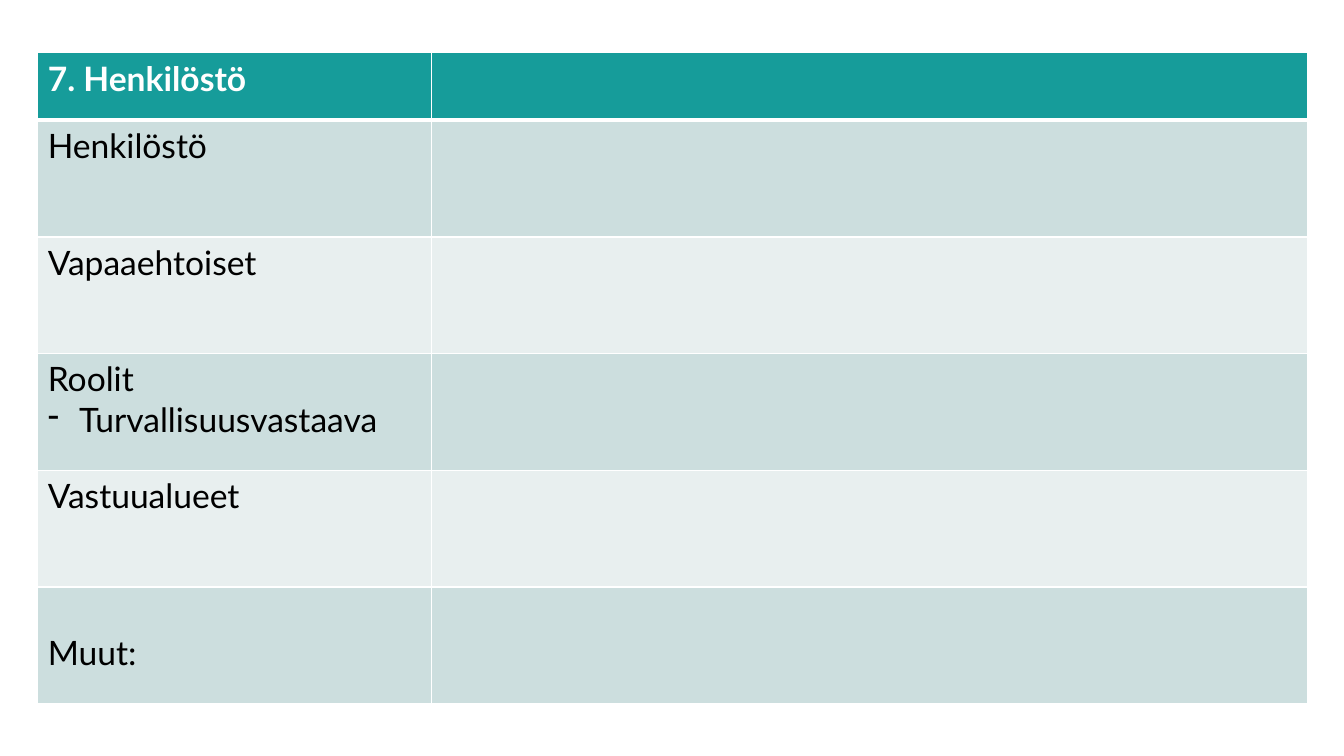
from dataclasses import dataclass

from lxml.etree import SubElement as Sub
from pptx import Presentation
from pptx.dml.color import RGBColor as Rgb
from pptx.oxml.ns import qn
from pptx.table import Table, _Cell as Cell
from pptx.util import Cm, Pt


@dataclass(frozen=True)
class Theme:
    font: str = "Lato"
    size: int = 24
    head: str = "169C9A"
    dark: str = "CCDEDE"
    light: str = "E8EFEF"
    white: str = "FFFFFF"
    black: str = "000000"
    thin: int = 1
    thick: int = 3


@dataclass(frozen=True)
class Topic:
    title: str
    roles: tuple[str, ...] = ()
    drop: float = 0.13


THEME = Theme()
WIDTHS = (9.93, 22.07)
HEAD_TALL, BODY_TALL = 1.7, 2.94
INDENT = 0.79
TOPICS = (
    Topic("7. Henkilöstö"),
    Topic("Henkilöstö"),
    Topic("Vapaaehtoiset"),
    Topic("Roolit", roles=("Turvallisuusvastaava",)),
    Topic("Vastuualueet"),
    Topic("Muut:", drop=1.15),
)


def add_edges(cell: Cell, row: int) -> None:
    """Rule the cell in white, with a thick line below the header."""
    edges = {
        "L": THEME.thin,
        "R": THEME.thin,
        "T": THEME.thick if row == 1 else THEME.thin,
        "B": THEME.thick if row == 0 else THEME.thin,
    }
    props = cell._tc.get_or_add_tcPr()
    for side, width in edges.items():
        line = Sub(props, qn(f"a:ln{side}"), w=str(Pt(width)))
        fill = Sub(line, qn("a:solidFill"))
        Sub(fill, qn("a:srgbClr"), val=THEME.white)


def paint(cell: Cell, row: int) -> None:
    add_edges(cell, row)
    band = THEME.dark if row % 2 else THEME.light
    cell.fill.solid()
    cell.fill.fore_color.rgb = Rgb.from_string(band if row else THEME.head)


def write(cell: Cell, topic: Topic, row: int) -> None:
    cell.margin_top = Cm(topic.drop)
    frame = cell.text_frame
    frame.text = "\n".join((topic.title, *topic.roles))
    style = {"name": THEME.font, "size": Pt(THEME.size), "bold": row == 0}
    ink = THEME.black if row else THEME.white
    for para in frame.paragraphs:
        font = para.runs[0].font
        for key, value in style.items():
            setattr(font, key, value)
        font.color.rgb = Rgb.from_string(ink)
    for para in frame.paragraphs[1:]:
        props = para._p.get_or_add_pPr()
        props.set("marL", str(Cm(INDENT)))
        props.set("indent", str(-Cm(INDENT)))
        Sub(props, qn("a:buChar"), char="-")


def fill_table(table: Table) -> None:
    for flag in ("first_row", "horz_banding"):
        setattr(table, flag, False)
    for col, width in zip(table.columns, WIDTHS):
        col.width = Cm(width)
    for row, topic in enumerate(TOPICS):
        table.rows[row].height = Cm(BODY_TALL if row else HEAD_TALL)
        for cell in table.rows[row].cells:
            paint(cell, row)
        write(table.cell(row, 0), topic, row)


def main() -> None:
    deck = Presentation()
    deck.slide_width, deck.slide_height = Cm(33.87), Cm(19.05)
    slide = deck.slides.add_slide(deck.slide_layouts[6])
    tall = HEAD_TALL + BODY_TALL * (len(TOPICS) - 1)
    frame = slide.shapes.add_table(
        len(TOPICS), len(WIDTHS), Cm(0.95), Cm(1.33), Cm(sum(WIDTHS)), Cm(tall)
    )
    fill_table(frame.table)
    deck.save("out.pptx")


if __name__ == "__main__":
    main()
